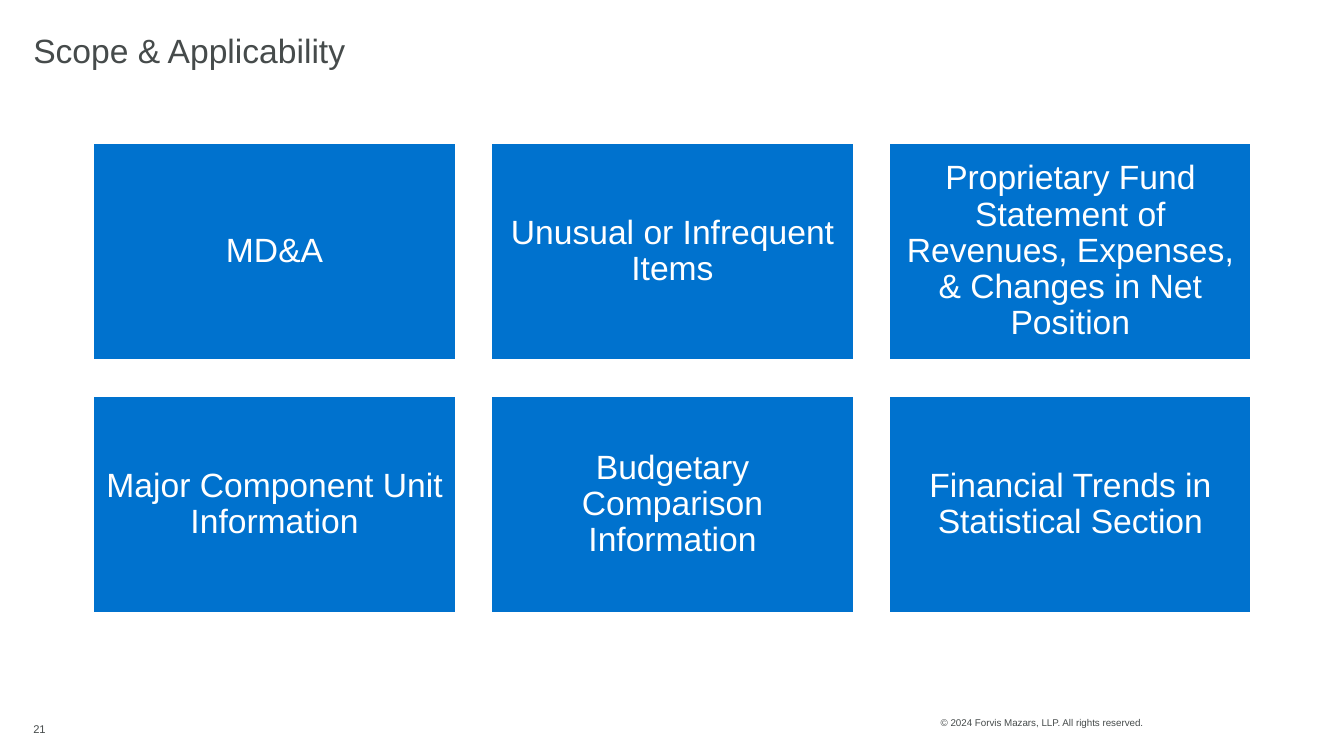
from dataclasses import dataclass

import pptx
import pptx.dml.color
import pptx.enum.shapes
import pptx.enum.text
import pptx.util

Inches = pptx.util.Inches
Pt = pptx.util.Pt
RGBColor = pptx.dml.color.RGBColor
PP_ALIGN = pptx.enum.text.PP_ALIGN


@dataclass(frozen=True)
class Theme:
    font: str = "Arial"
    ink: RGBColor = RGBColor(0x46, 0x4B, 0x4B)
    blue: RGBColor = RGBColor(0x00, 0x72, 0xCE)
    white: RGBColor = RGBColor(0xFF, 0xFF, 0xFF)
    heading_size: int = 24
    number_size: int = 8
    copyright_size: int = 7


THEME = Theme()
TOPICS = [
    "MD&A",
    "Unusual or Infrequent Items",
    "Proprietary Fund Statement of Revenues, Expenses, & Changes in Net Position",
    "Major Component Unit Information",
    "Budgetary Comparison Information",
    "Financial Trends in Statistical Section",
]


def write_text(shape, text, size, color, margins, align=PP_ALIGN.LEFT, spacing=1.0):
    """Fill a shape with one paragraph; margins are (horizontal, vertical) inches."""
    frame = shape.text_frame
    frame.word_wrap = True
    frame.vertical_anchor = pptx.enum.text.MSO_ANCHOR.MIDDLE
    frame.margin_left = frame.margin_right = Inches(margins[0])
    frame.margin_top = frame.margin_bottom = Inches(margins[1])
    paragraph = frame.paragraphs[0]
    paragraph.text = text
    paragraph.alignment = align
    paragraph.line_spacing = spacing
    paragraph.font.name = THEME.font
    paragraph.font.size = Pt(size)
    paragraph.font.color.rgb = color


def add_label(slide, box, text, size, margins=(0, 0.05), spacing=1.0):
    shape = slide.shapes.add_textbox(*map(Inches, box))
    write_text(shape, text, size, THEME.ink, margins, spacing=spacing)


def add_topic_card(slide, box, topic):
    card = slide.shapes.add_shape(
        pptx.enum.shapes.MSO_SHAPE.RECTANGLE, *map(Inches, box))
    card.shadow.inherit = False
    card.fill.solid()
    card.fill.fore_color.rgb = THEME.blue
    card.line.color.rgb = THEME.white
    card.line.width = Pt(1)
    write_text(card, topic, THEME.heading_size, THEME.white, (0.1, 0.1),
               PP_ALIGN.CENTER, 0.9)


def add_topic_grid(slide, box, topics, columns=3, gap=0.36):
    left, top, width, height = box
    rows = -(-len(topics) // columns)
    card_width = (width - gap * (columns - 1)) / columns
    card_height = (height - gap * (rows - 1)) / rows
    for index, topic in enumerate(topics):
        row, column = divmod(index, columns)
        card_left = left + column * (card_width + gap)
        card_top = top + row * (card_height + gap)
        add_topic_card(slide, (card_left, card_top, card_width, card_height), topic)


def add_footer(slide, box):
    left, top, width, height = box
    add_label(slide, (left, top + 0.06, 0.98, height), "21", THEME.number_size)
    add_label(slide, (left + width - 2.2, top, 2.2, height),
              "© 2024 Forvis Mazars, LLP. All rights reserved.", THEME.copyright_size)


def main():
    presentation = pptx.Presentation()
    presentation.slide_width = Inches(13.33)
    presentation.slide_height = Inches(7.5)
    slide = presentation.slides.add_slide(presentation.slide_layouts[6])
    add_label(slide, (0.33, 0.33, 6.18, 0.39), "Scope & Applicability",
              THEME.heading_size, (0, 0), 0.9)
    add_topic_grid(slide, (0.93, 1.42, 11.48, 4.66), TOPICS)
    add_footer(slide, (0.33, 7.02, 11.2, 0.3))
    presentation.save("out.pptx")


if __name__ == "__main__":
    main()
